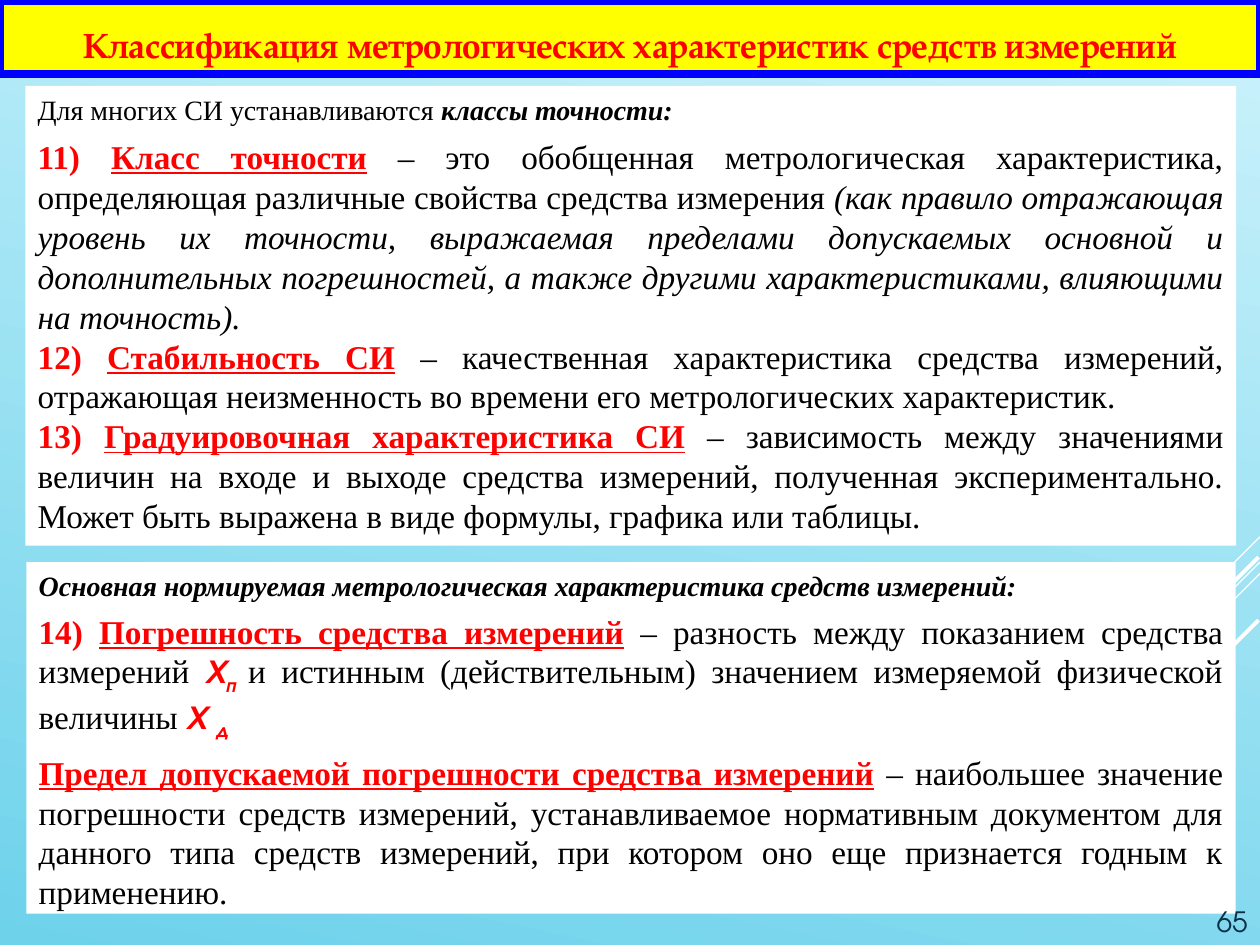
from lxml import etree
from pptx import Presentation
from pptx import util as u
from pptx.dml.color import RGBColor
from pptx.enum import shapes, text
from pptx.oxml import ns

Cm, Pt = u.Cm, u.Pt
RED = RGBColor(0xFF, 0, 0)
BLACK = RGBColor(0, 0, 0)
WHITE = RGBColor(0xFF, 0xFF, 0xFF)
YELLOW = RGBColor(0xFF, 0xFF, 0)
BLUE = RGBColor(0, 0, 0xFF)
NAVY = RGBColor(0x0A, 0x30, 0x4A)
SKY = (RGBColor(0xC8, 0xF1, 0xFB), RGBColor(0x6E, 0xD2, 0xEB))
SERIF, SANS, HEAD = "Times New Roman", "TeX Gyre Adventor", "TeX Gyre Pagella"
ALIGN = text.PP_ALIGN

# Character styles: colour and font attributes
big = {"name": SERIF, "size": Pt(19)}
small = {"name": SERIF, "size": Pt(16)}
sign = {"name": SANS, "size": Pt(19), "bold": True, "italic": True}
STYLES = {
    "intro": (BLACK, small),
    "lead": (BLACK, {**small, "bold": True, "italic": True}),
    "num": (RED, {**big, "bold": True}),
    "term": (RED, {**big, "bold": True, "underline": True}),
    "body": (BLACK, big),
    "note": (BLACK, {**big, "italic": True}),
    "sign": (RED, sign),
    "sub": (RED, sign),
    "head": (RED, {"name": HEAD, "size": Pt(20), "bold": True}),
    "page": (NAVY, {"name": SANS, "size": Pt(16)}),
}


def write(par, runs, align, gap=0):
    """Fill a paragraph with (style, words) runs; gap is the space before it."""
    look = {"alignment": align, "space_before": Pt(gap), "space_after": Pt(0)}
    for key, val in look.items():
        setattr(par, key, val)
    for style, words in runs:
        run = par.add_run()
        run.text = words
        tint, look = STYLES[style]
        for key, val in look.items():
            setattr(run.font, key, val)
        run.font.color.rgb = tint
        if style == "sub":
            run.font._element.set("baseline", "-25000")


def place(shape, box, anchor, top=0.13):
    """Set position, margins and anchor of a shape; return its text frame."""
    for key, val in zip(("left", "top", "width", "height"), box):
        setattr(shape, key, Cm(val))
    frame = shape.text_frame
    look = {"word_wrap": True, "auto_size": text.MSO_AUTO_SIZE.NONE,
            "vertical_anchor": anchor, "margin_left": Cm(0.25),
            "margin_right": Cm(0.25), "margin_top": Cm(top),
            "margin_bottom": Cm(0.13)}
    for key, val in look.items():
        setattr(frame, key, val)
    return frame


deck = Presentation()
deck.slide_width, deck.slide_height = Cm(25.4), Cm(19.05)
slide = deck.slides.add_slide(deck.slide_layouts[3])

# Background
fill = slide.background.fill
fill.gradient()
fill.gradient_angle = 258
for stop, tint, pos in zip(fill.gradient_stops, SKY, (0.04, 1)):
    stop.color.rgb = tint
    stop.position = pos

# Diagonal strokes behind the text: right end, height there, run, weight
group = slide.shapes.add_group_shape()
slide.shapes._spTree.insert(2, group._element)
for right, top, run, weight in ((25.4, 10.82, 2.11, 0.75),
                                (25.4, 11.33, 6.87, 0.75),
                                (25.4, 11.56, 4.37, 0.75),
                                (25.37, 11.23, 3.99, 2.25),
                                (25.37, 12.5, 2.9, 2.25)):
    line = group.shapes.add_connector(
        shapes.MSO_CONNECTOR.STRAIGHT,
        Cm(right), Cm(top), Cm(right - run), Cm(top + run))
    line.line.color.rgb = WHITE
    line.line.width = Pt(weight)
    etree.SubElement(line._element.spPr, ns.qn("a:effectLst"))

# Title in a rounded frame
title, *bodies = slide.placeholders
frame = place(title, (0, 0.03, 25.4, 1.47), text.MSO_ANCHOR.MIDDLE, 0.4)
geom = etree.SubElement(title._element.spPr, ns.qn("a:prstGeom"),
                        prst="roundRect")
etree.SubElement(geom, ns.qn("a:avLst"))
title.fill.solid()
title.fill.fore_color.rgb = YELLOW
title.line.color.rgb = BLUE
title.line.width = Pt(4.5)
write(frame.paragraphs[0],
      [("head", "Классификация метрологических характеристик средств измерений")],
      ALIGN.CENTER)

# White text panels: box, then paragraphs as (gap before, runs)
PANELS = [
    ((0.51, 1.73, 24.41, 9.27), [
        (0, [("intro", "Для многих СИ устанавливаются "),
             ("lead", "классы точности:")]),
        (6, [("num", "11) "), ("term", "Класс точности"),
             ("body", " – это обобщенная метрологическая характеристика, "
              "определяющая различные свойства средства измерения "),
             ("note", "(как правило отражающая уровень их точности, выражаемая "
              "пределами допускаемых основной и дополнительных погрешностей, "
              "а также другими характеристиками, влияющими на точность).")]),
        (0, [("num", "12) "), ("term", "Стабильность СИ"),
             ("body", " – качественная характеристика средства измерений, "
              "отражающая неизменность во времени его метрологических "
              "характеристик.")]),
        (0, [("num", "13) "), ("term", "Градуировочная характеристика СИ"),
             ("body", " – зависимость между значениями величин на входе и "
              "выходе средства измерений, полученная экспериментально. Может "
              "быть выражена в виде формулы, графика или таблицы.")]),
    ]),
    ((0.53, 11.33, 24.38, 7.09), [
        (0, [("lead", "Основная нормируемая метрологическая характеристика "
              "средств измерений:")]),
        (5, [("num", "14) "), ("term", "Погрешность средства измерений"),
             ("body", " – разность между показанием средства измерений "),
             ("sign", "Х"), ("sub", "п "),
             ("body", "и истинным (действительным) значением измеряемой "
              "физической величины "),
             ("sign", "Х "), ("sub", "д")]),
        (6, [("term", "Предел допускаемой погрешности средства измерений"),
             ("body", " – наибольшее значение погрешности средств измерений, "
              "устанавливаемое нормативным документом для данного типа средств "
              "измерений, при котором оно еще признается годным к "
              "применению.")]),
    ]),
]
for body, (box, pars) in zip(bodies, PANELS):
    frame = place(body, box, text.MSO_ANCHOR.TOP)
    body.fill.solid()
    body.fill.fore_color.rgb = WHITE
    for i, (gap, runs) in enumerate(pars):
        par = frame.add_paragraph() if i else frame.paragraphs[0]
        write(par, runs, ALIGN.JUSTIFY, gap)
        props = par._p.get_or_add_pPr()
        props.set("marL", "0")
        props.set("indent", "0")
        etree.SubElement(props, ns.qn("a:buNone"))

# Page number
page = slide.shapes.add_textbox(0, 0, 0, 0)
frame = place(page, (23.01, 17.2, 2.39, 1.85), text.MSO_ANCHOR.BOTTOM)
write(frame.paragraphs[0], [("page", "65")], ALIGN.RIGHT)

deck.save("out.pptx")
